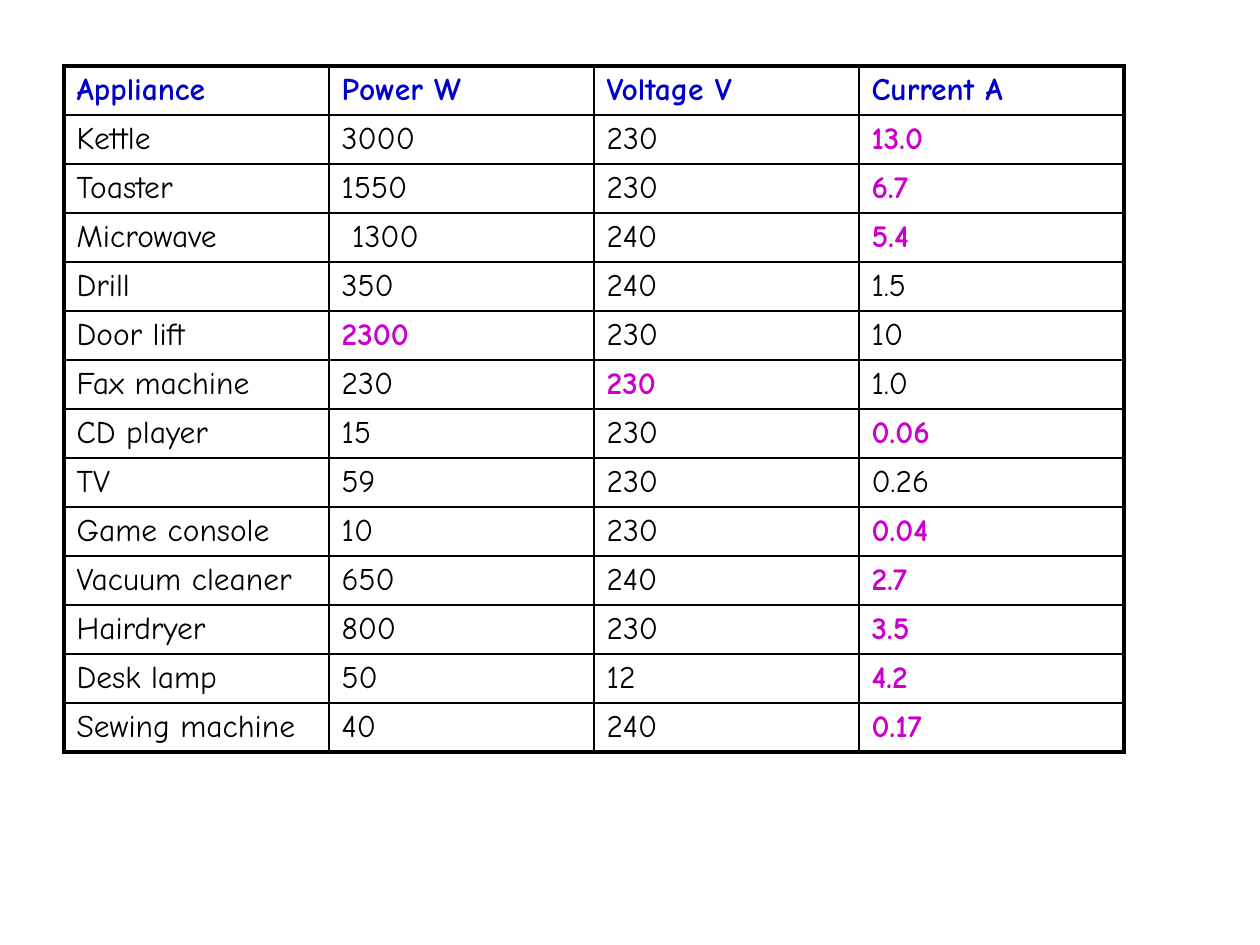
from dataclasses import dataclass

from lxml import etree
from pptx import Presentation, util as u
from pptx.dml.color import RGBColor
from pptx.oxml.ns import qn

PX = u.Inches(1) / 126


@dataclass(frozen=True)
class Theme:
    font: str = "Comic Neue"
    size: int = 18
    header: str = "0000CC"
    body: str = "000000"
    answer: str = "CC00CC"
    border: str = "000000"
    inner: float = 1
    outer: float = 2.25


THEME = Theme()
HEADERS = ("Appliance", "Power W", "Voltage V", "Current A")
POWER, VOLTAGE, CURRENT = 1, 2, 3
# Each row's values, then the column that holds a worked-out answer.
APPLIANCES = (
    (("Kettle", "3000", "230", "13.0"), CURRENT),
    (("Toaster", "1550", "230", "6.7"), CURRENT),
    (("Microwave", " 1300", "240", "5.4"), CURRENT),
    (("Drill", "350", "240", "1.5"), None),
    (("Door lift", "2300", "230", "10"), POWER),
    (("Fax machine", "230", "230", "1.0"), VOLTAGE),
    (("CD player", "15", "230", "0.06"), CURRENT),
    (("TV", "59", "230", "0.26"), None),
    (("Game console", "10", "230", "0.04"), CURRENT),
    (("Vacuum cleaner", "650", "240", "2.7"), CURRENT),
    (("Hairdryer", "800", "230", "3.5"), CURRENT),
    (("Desk lamp", "50", "12", "4.2"), CURRENT),
    (("Sewing machine", "40", "240", "0.17"), CURRENT),
)
LEFT, TOP, COL_W, ROW_H = 64, 66, 265, 49


def px(n):
    return u.Emu(round(n * PX))


def set_borders(cell, outer_sides):
    """Draw all four sides; those in outer_sides get the heavy line."""
    tc_pr = cell._tc.get_or_add_tcPr()
    for side in "LRTB":
        width = THEME.outer if side in outer_sides else THEME.inner
        ln = etree.SubElement(tc_pr, qn(f"a:ln{side}"), w=str(u.Pt(width)))
        fill = etree.SubElement(ln, qn("a:solidFill"))
        etree.SubElement(fill, qn("a:srgbClr"), val=THEME.border)


def set_text(cell, text, color, bold):
    r = cell.text_frame.paragraphs[0].add_run()
    r.text = text
    formats = {"name": THEME.font, "size": u.Pt(THEME.size), "bold": bold}
    for name, value in formats.items():
        setattr(r.font, name, value)
    r.font.color.rgb = RGBColor.from_string(color)


def add_appliance_table(s):
    rows = [(HEADERS, None), *APPLIANCES]
    n_rows, n_cols = len(rows), len(HEADERS)
    table = s.shapes.add_table(n_rows, n_cols, px(LEFT), px(TOP),
                               px(COL_W * n_cols), px(ROW_H * n_rows)).table
    table.first_row = table.horz_banding = False
    for i, (values, answer_col) in enumerate(rows):
        for j, value in enumerate(values):
            cell = table.cell(i, j)
            edges = {"L": j == 0, "R": j == n_cols - 1,
                     "T": i == 0, "B": i == n_rows - 1}
            set_borders(cell, [side for side, on in edges.items() if on])
            cell.fill.background()
            if i == 0:
                color = THEME.header
            else:
                color = THEME.answer if j == answer_col else THEME.body
            set_text(cell, value, color, color != THEME.body)


def main():
    prs = Presentation()
    prs.slide_width, prs.slide_height = px(1260), px(945)
    s = prs.slides.add_slide(prs.slide_layouts[6])
    add_appliance_table(s)
    prs.save("out.pptx")


if __name__ == "__main__":
    main()
